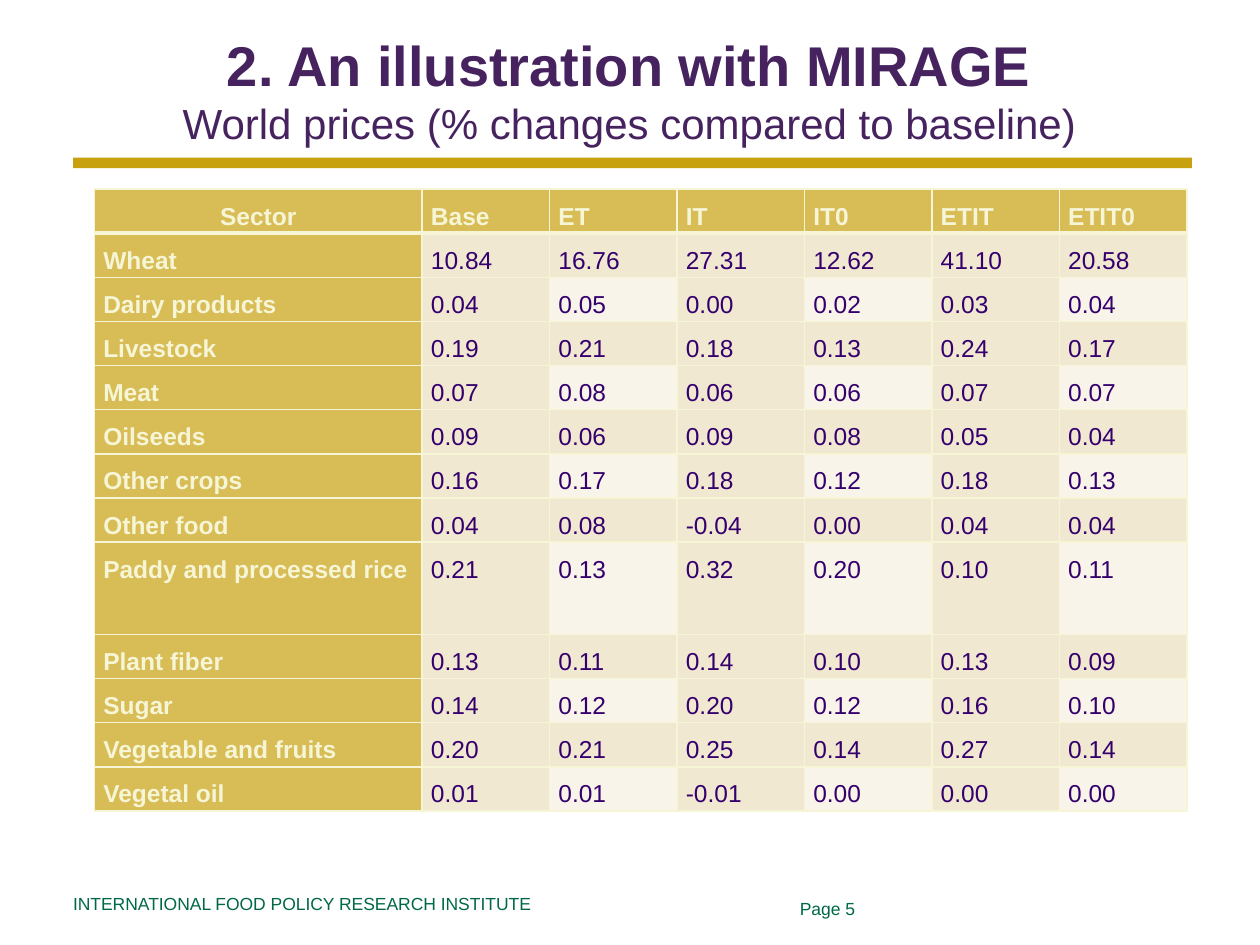
from lxml.etree import SubElement
from pptx import Presentation
from pptx.dml.color import RGBColor
from pptx.enum.shapes import MSO_SHAPE
from pptx.enum.text import MSO_ANCHOR, PP_ALIGN
from pptx.oxml.ns import qn
from pptx.util import Inches, Pt

PURPLE = RGBColor(0x46, 0x23, 0x5F)
VIOLET = RGBColor(0x35, 0x00, 0x6D)
GREEN = RGBColor(0x00, 0x68, 0x48)
GOLD = RGBColor(0xC7, 0xA1, 0x0E)
SAND = RGBColor(0xD8, 0xBD, 0x56)
CREAM = RGBColor(0xF6, 0xF5, 0xD6)
BEIGE = RGBColor(0xF0, 0xE8, 0xD1)
IVORY = RGBColor(0xF8, 0xF4, 0xE9)

WIDTH, HEIGHT = Inches(10), Inches(7.5)
SECTOR_SHARE = 0.3
TALL_SECTOR = "Paddy and processed rice"
TALL_ROWS = 2.1

SCENARIOS = ["Base", "ET", "IT", "IT0", "ETIT", "ETIT0"]
PRICES = {
    "Wheat": "10.84 16.76 27.31 12.62 41.10 20.58",
    "Dairy products": "0.04 0.05 0.00 0.02 0.03 0.04",
    "Livestock": "0.19 0.21 0.18 0.13 0.24 0.17",
    "Meat": "0.07 0.08 0.06 0.06 0.07 0.07",
    "Oilseeds": "0.09 0.06 0.09 0.08 0.05 0.04",
    "Other crops": "0.16 0.17 0.18 0.12 0.18 0.13",
    "Other food": "0.04 0.08 -0.04 0.00 0.04 0.04",
    TALL_SECTOR: "0.21 0.13 0.32 0.20 0.10 0.11",
    "Plant fiber": "0.13 0.11 0.14 0.10 0.13 0.09",
    "Sugar": "0.14 0.12 0.20 0.12 0.16 0.10",
    "Vegetable and fruits": "0.20 0.21 0.25 0.14 0.27 0.14",
    "Vegetal oil": "0.01 0.01 -0.01 0.00 0.00 0.00",
}


def share(left, top, width, height):
    """Turn percentages of the slide's size into a box of lengths."""
    return (int(left * WIDTH / 100), int(top * HEIGHT / 100),
            int(width * WIDTH / 100), int(height * HEIGHT / 100))


def set_font(font, size, color, bold=False):
    """Give a font the slide's typeface with a size, colour and weight."""
    font.name, font.size, font.bold = "Arial", Pt(size), bold
    font.color.rgb = color


def add_heading(slide, box):
    """Place the centred title with its subtitle on a second line."""
    frame = slide.shapes.add_textbox(*box).text_frame
    frame.word_wrap = True
    frame.vertical_anchor = MSO_ANCHOR.MIDDLE
    frame.margin_left = frame.margin_right = 0
    heading = frame.paragraphs[0]
    heading.alignment = PP_ALIGN.CENTER
    title = heading.add_run()
    title.text = "2. An illustration with MIRAGE"
    set_font(title.font, 32, PURPLE, True)
    heading.add_line_break()
    subtitle = heading.add_run()
    subtitle.text = "World prices (% changes compared to baseline)"
    set_font(subtitle.font, 24, PURPLE)


def add_rule(slide, box):
    """Place the gold bar under the heading."""
    bar = slide.shapes.add_shape(MSO_SHAPE.RECTANGLE, *box)
    bar.shadow.inherit = False
    bar.fill.solid()
    bar.fill.fore_color.rgb = GOLD
    bar.line.fill.background()


def add_border(properties, side, points):
    """Draw one cream border of a table cell."""
    line = SubElement(properties, qn(f"a:{side}"), w=str(Pt(points)))
    fill = SubElement(line, qn("a:solidFill"))
    SubElement(fill, qn("a:srgbClr"), val=str(CREAM))


def fill_cell(cell, text, row, column):
    """Write and style a cell according to its place in the table."""
    properties = cell._tc.get_or_add_tcPr()
    for side in ("lnL", "lnR", "lnT", "lnB"):
        under_header = (side, row) in (("lnB", 0), ("lnT", 1))
        add_border(properties, side, 3 if under_header else 1)
    label = row == 0 or column == 0
    banded = row % 2 == 1 or column % 2 == 1
    cell.fill.solid()
    cell.fill.fore_color.rgb = SAND if label else BEIGE if banded else IVORY
    cell.margin_left = cell.margin_right = Inches(0.07)
    cell.margin_top = cell.margin_bottom = 0
    cell.text = text
    entry = cell.text_frame.paragraphs[0]
    entry.alignment = PP_ALIGN.CENTER if row == column == 0 else PP_ALIGN.LEFT
    entry.line_spacing = 1.5
    entry.space_after = Pt(2)
    set_font(entry.font, 14, CREAM if label else VIOLET, label)


def add_prices(slide, box):
    """Place the table of world prices by sector and scenario."""
    rows = [["Sector", *SCENARIOS]]
    rows += [[sector, *values.split()] for sector, values in PRICES.items()]
    prices = slide.shapes.add_table(len(rows), len(rows[0]), *box).table
    width, height = box[2:]
    row_height = height / (len(rows) - 1 + TALL_ROWS)
    scenario_share = (1 - SECTOR_SHARE) / len(SCENARIOS)
    for column, part in enumerate(prices.columns):
        part.width = int(width * (scenario_share if column else SECTOR_SHARE))
    for row, texts in enumerate(rows):
        units = TALL_ROWS if texts[0] == TALL_SECTOR else 1
        prices.rows[row].height = int(row_height * units)
        for column, text in enumerate(texts):
            fill_cell(prices.cell(row, column), text, row, column)


def add_footer(slide, box, text, margins):
    """Place one small green footer text with left, top margins in inches."""
    frame = slide.shapes.add_textbox(*box).text_frame
    frame.word_wrap = True
    frame.margin_left, frame.margin_top = map(Inches, margins)
    frame.text = text
    set_font(frame.paragraphs[0].font, 10, GREEN)


def main():
    """Build the slide and save it."""
    deck = Presentation()
    deck.slide_width, deck.slide_height = WIDTH, HEIGHT
    slide = deck.slides.add_slide(deck.slide_layouts[6])
    add_rule(slide, share(5.8, 16.7, 88.8, 1.1))
    add_footer(slide, share(5.8, 94.4, 66.7, 3.1),
               "INTERNATIONAL FOOD POLICY RESEARCH INSTITUTE", (0, 0.01))
    add_heading(slide, share(5.8, 2.5, 88.3, 13.9))
    add_prices(slide, share(7.5, 20, 86.7, 65.5))
    add_footer(slide, share(62.5, 94.4, 31.7, 6.7), "Page 5", (0.1, 0.05))
    deck.save("out.pptx")


if __name__ == "__main__":
    main()
